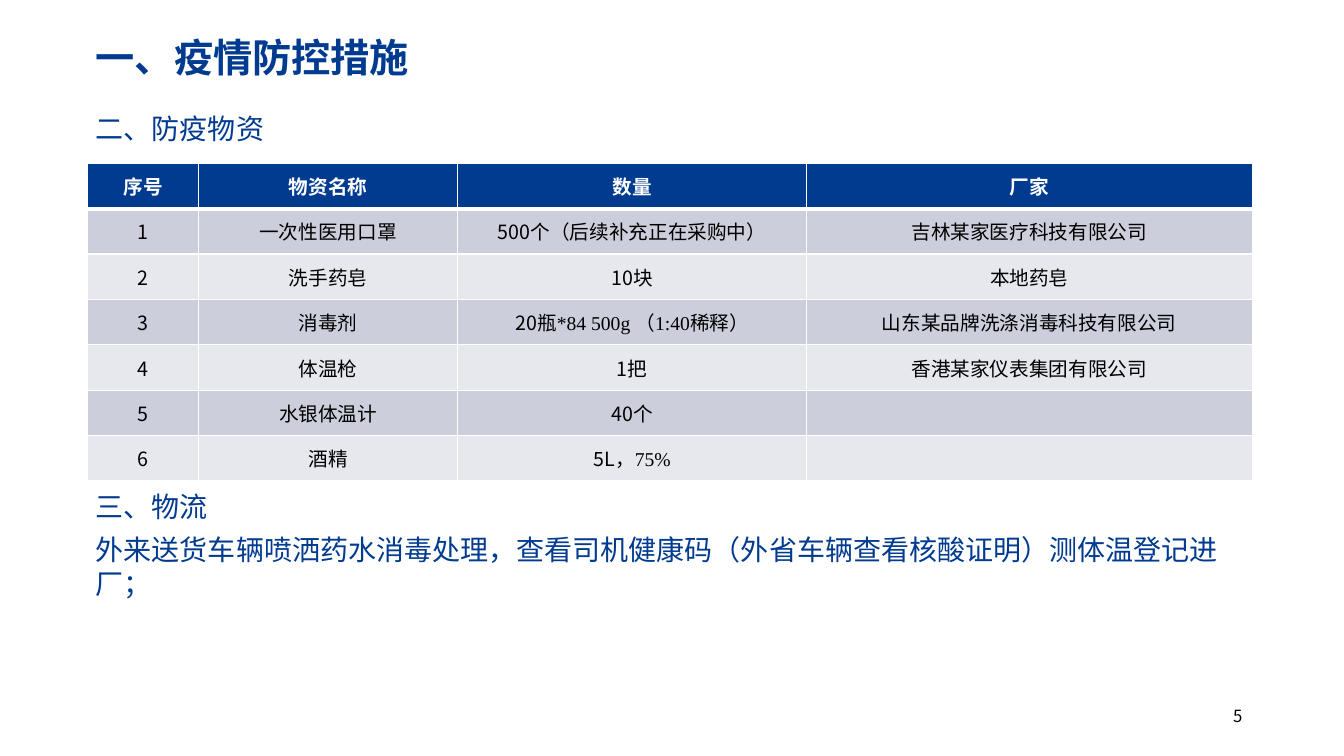
from dataclasses import dataclass

from lxml import etree
from pptx import Presentation
from pptx import util as u
from pptx.dml.color import RGBColor
from pptx.enum import text as t
from pptx.oxml import ns

SANS, SERIF = "Noto Sans CJK SC", "Times New Roman"
BLUE, WHITE, BLACK = "003B90", "FFFFFF", "000000"
BANDS = ("CCCEDB", "E7E8EE")
LEFT, WIDTH = 0.87, 11.55
COLUMN_WIDTHS = (1.1, 2.57, 3.46, 4.42)
ROW_HEIGHT = 0.45
HEADINGS = ("序号", "物资名称", "数量", "厂家")


@dataclass(frozen=True)
class Supply:
    name: str
    amount: str
    unit: str
    maker: str = ""


SUPPLIES = (
    Supply("一次性医用口罩", "500", "个（后续补充正在采购中）", "吉林某家医疗科技有限公司"),
    Supply("洗手药皂", "10", "块", "本地药皂"),
    Supply("消毒剂", "20", "瓶*84 500g （1:40稀释）", "山东某品牌洗涤消毒科技有限公司"),
    Supply("体温枪", "1", "把", "香港某家仪表集团有限公司"),
    Supply("水银体温计", "40", "个"),
    Supply("酒精", "5L", "，75%"),
)


def colour(value: str) -> RGBColor:
    return RGBColor.from_string(value)


def apply(target, **values) -> None:
    for name, value in values.items():
        setattr(target, name, value)


def add_span(para, words: str, size: float, shade: str,
             face: str = SANS, bold: bool = False) -> None:
    span = para.add_run()
    span.text = words
    apply(span.font, size=u.Pt(size), name=face, bold=bold)
    span.font.color.rgb = colour(shade)
    east_asian = etree.SubElement(span.font._element, ns.qn("a:ea"))
    east_asian.set("typeface", SANS)


def set_margins(target, side: float, end: float) -> None:
    apply(target, margin_left=u.Inches(side), margin_right=u.Inches(side),
          margin_top=u.Inches(end), margin_bottom=u.Inches(end))


def add_box(page, left: float, top: float, width: float, height: float):
    box = page.shapes.add_textbox(*map(u.Inches, (left, top, width, height)))
    box.text_frame.word_wrap = True
    return box.text_frame


def add_title(page) -> None:
    title = page.shapes.title
    apply(title, left=u.Inches(LEFT), top=u.Inches(0.29),
          width=u.Inches(WIDTH), height=u.Inches(0.61))
    frame = title.text_frame
    apply(frame, word_wrap=True, auto_size=t.MSO_AUTO_SIZE.NONE,
          vertical_anchor=t.MSO_ANCHOR.MIDDLE)
    set_margins(frame, 0.08, 0.04)
    para = frame.paragraphs[0]
    apply(para, alignment=t.PP_ALIGN.LEFT, line_spacing=0.9)
    add_span(para, "一、疫情防控措施", 28, BLUE, bold=True)


def add_body(page) -> None:
    """Add the section text, leaving room for the table after its first line."""
    frame = add_box(page, LEFT, 1.06, WIDTH, 5.68)
    set_margins(frame, 0.08, 0.04)
    lines = (
        ("二、防疫物资", 0),
        ("三、物流", 246),
        ("外来送货车辆喷洒药水消毒处理，查看司机健康码（外省车辆查看核酸证明）测体温登记进厂；", 6),
    )
    for index, (words, gap) in enumerate(lines):
        para = frame.add_paragraph() if index else frame.paragraphs[0]
        para.line_spacing = u.Pt(24.3)
        if gap:
            para.space_before = u.Pt(gap)
        add_span(para, words, 20, BLUE)


def format_cell(cell, fill: str, top: float, bottom: float) -> None:
    set_margins(cell, 0.07, 0)
    cell.vertical_anchor = t.MSO_ANCHOR.MIDDLE
    properties = cell._tc.get_or_add_tcPr()
    for side, points in (("L", 1), ("R", 1), ("T", top), ("B", bottom)):
        line = etree.SubElement(properties, ns.qn(f"a:ln{side}"), w=str(u.Pt(points)))
        paint = etree.SubElement(line, ns.qn("a:solidFill"))
        etree.SubElement(paint, ns.qn("a:srgbClr"), val=WHITE)
    cell.fill.solid()
    cell.fill.fore_color.rgb = colour(fill)


def add_supplies(page) -> None:
    row_count = len(SUPPLIES) + 1
    table = page.shapes.add_table(
        row_count, len(HEADINGS), u.Inches(LEFT), u.Inches(1.62),
        u.Inches(WIDTH), u.Inches(ROW_HEIGHT * row_count)).table
    for column, width in zip(table.columns, COLUMN_WIDTHS):
        column.width = u.Inches(width)
    rows = [[[(heading, SERIF)] for heading in HEADINGS]]
    for number, item in enumerate(SUPPLIES, 1):
        rows.append([
            [(str(number), SANS)],
            [(item.name, SERIF)],
            [(item.amount, SANS), (item.unit, SERIF)],
            [(item.maker, SERIF)] if item.maker else [],
        ])
    for row, contents in enumerate(rows):
        header = row == 0
        table.rows[row].height = u.Inches(ROW_HEIGHT)
        for column, spans in enumerate(contents):
            cell = table.cell(row, column)
            format_cell(cell, BLUE if header else BANDS[(row - 1) % 2],
                        top=3 if row == 1 else 1, bottom=3 if header else 1)
            para = cell.text_frame.paragraphs[0]
            para.alignment = t.PP_ALIGN.CENTER
            for words, face in spans:
                add_span(para, words, 14, WHITE if header else BLACK, face, header)


def add_page_number(page) -> None:
    para = add_box(page, 11.39, 6.95, 1.03, 0.4).paragraphs[0]
    para.alignment = t.PP_ALIGN.RIGHT
    add_span(para, "5", 12, BLACK)


def main() -> None:
    deck = Presentation()
    apply(deck, slide_width=u.Inches(13.33), slide_height=u.Inches(7.5))
    page = deck.slides.add_slide(deck.slide_layouts.get_by_name("Title Only"))
    add_body(page)
    add_title(page)
    add_page_number(page)
    add_supplies(page)
    deck.save("out.pptx")


if __name__ == "__main__":
    main()
